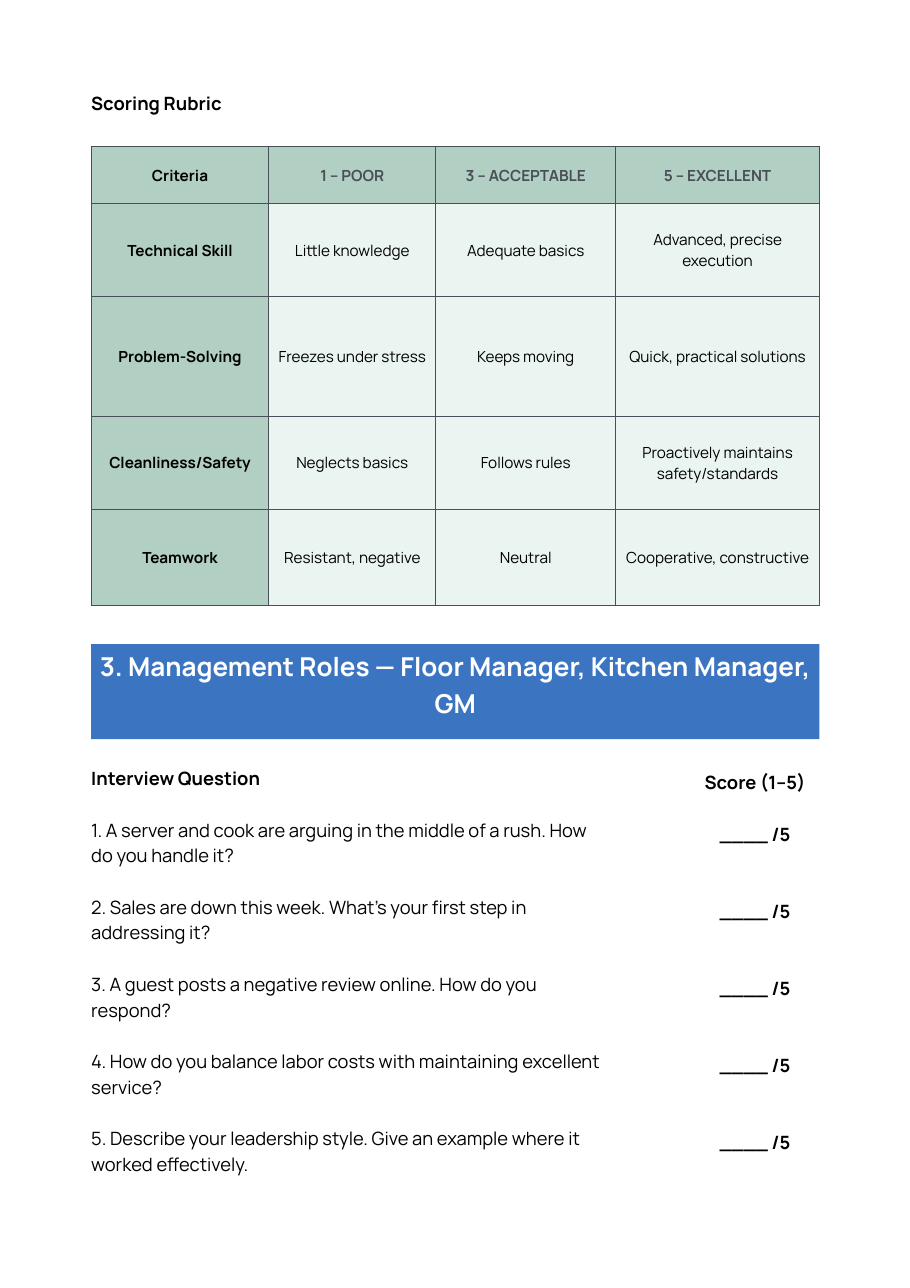
from lxml.etree import SubElement
from pptx import Presentation
from pptx.dml.color import RGBColor
from pptx.enum.shapes import MSO_SHAPE
from pptx.enum.text import MSO_ANCHOR, PP_ALIGN
from pptx.oxml.ns import qn
from pptx.util import Pt

BLACK = RGBColor(0x00, 0x00, 0x00)
WHITE = RGBColor(0xFF, 0xFF, 0xFF)
SLATE = RGBColor(0x49, 0x4F, 0x56)
SAGE = RGBColor(0xB2, 0xCF, 0xC4)
MINT = RGBColor(0xEA, 0xF4, 0xF0)
BLUE = RGBColor(0x3B, 0x75, 0xC2)

LEFT, WIDTH = 59.6, 476
LINE = 16.8


def write(frame, *lines, size=12, leading=LINE, color=BLACK, bold=True,
          align=PP_ALIGN.LEFT, anchor=MSO_ANCHOR.TOP, inset=0, gap=0):
    frame.word_wrap = True
    frame.vertical_anchor = anchor
    frame.margin_left = frame.margin_right = Pt(inset)
    frame.margin_top = frame.margin_bottom = Pt(inset)
    for index, line in enumerate(lines):
        paragraph = frame.paragraphs[0] if index == 0 else frame.add_paragraph()
        paragraph.alignment = align
        paragraph.line_spacing = Pt(leading)
        paragraph.space_before = Pt(gap if index else 0)
        run = paragraph.add_run()
        run.text = line
        run.font.name = "Manrope"
        run.font.size = Pt(size)
        run.font.bold = bold
        run.font.color.rgb = color


def draw_borders(cell):
    properties = cell._tc.get_or_add_tcPr()
    for side in ("a:lnL", "a:lnR", "a:lnT", "a:lnB"):
        border = SubElement(properties, qn(side), w=str(Pt(1.03)))
        fill = SubElement(border, qn("a:solidFill"))
        SubElement(fill, qn("a:srgbClr"), val=str(SLATE))


prs = Presentation()
prs.slide_width, prs.slide_height = Pt(594.72), Pt(841.68)
slide = prs.slides.add_slide(prs.slide_layouts[6])
shapes = slide.shapes

# Scoring rubric
rubric_title = shapes.add_textbox(Pt(LEFT), Pt(57.6), Pt(WIDTH), Pt(LINE))
write(rubric_title.text_frame, "Scoring Rubric")

criteria = [
    ["Criteria", "1 – POOR", "3 – ACCEPTABLE", "5 – EXCELLENT"],
    ["Technical Skill", "Little knowledge", "Adequate basics", "Advanced, precise execution"],
    ["Problem-Solving", "Freezes under stress", "Keeps moving", "Quick, practical solutions"],
    ["Cleanliness/Safety", "Neglects basics", "Follows rules", "Proactively maintains safety/standards"],
    ["Teamwork", "Resistant, negative", "Neutral", "Cooperative, constructive"],
]
column_widths = [116, 109.2, 117.5, 133.3]
row_heights = [37.2, 60.7, 78.3, 61, 62.8]

rubric = shapes.add_table(len(row_heights), len(column_widths), Pt(LEFT), Pt(95.8),
                          Pt(WIDTH), Pt(sum(row_heights))).table
rubric.first_row = rubric.horz_banding = False
for column, width in zip(rubric.columns, column_widths):
    column.width = Pt(width)
for r, (height, row) in enumerate(zip(row_heights, criteria)):
    rubric.rows[r].height = Pt(height)
    for c, wording in enumerate(row):
        cell = rubric.cell(r, c)
        heading = r == 0 or c == 0
        draw_borders(cell)
        cell.fill.solid()
        cell.fill.fore_color.rgb = SAGE if heading else MINT
        write(cell.text_frame, wording, size=10, leading=14, bold=heading,
              color=SLATE if r == 0 and c > 0 else BLACK, align=PP_ALIGN.CENTER)
        cell.vertical_anchor = MSO_ANCHOR.MIDDLE
        cell.margin_left = cell.margin_right = Pt(6.5)
        cell.margin_top = cell.margin_bottom = Pt(6.5)

# Section banner
banner = shapes.add_shape(MSO_SHAPE.RECTANGLE, Pt(LEFT), Pt(421), Pt(WIDTH), Pt(62))
banner.shadow.inherit = False
banner.fill.solid()
banner.fill.fore_color.rgb = BLUE
banner.line.fill.background()
section_title = shapes.add_textbox(Pt(LEFT), Pt(408.2), Pt(WIDTH), Pt(74.9))
write(section_title.text_frame, "3. Management Roles — Floor Manager, Kitchen Manager, GM",
      size=17, leading=23.8, color=WHITE, align=PP_ALIGN.CENTER,
      anchor=MSO_ANCHOR.MIDDLE, inset=4)

# Interview questions
questions = [
    "1. A server and cook are arguing in the middle of a rush. How do you handle it?",
    "2. Sales are down this week. What’s your first step in addressing it?",
    "3. A guest posts a negative review online. How do you respond?",
    "4. How do you balance labor costs with maintaining excellent service?",
    "5. Describe your leadership style. Give an example where it worked effectively.",
]
interview = shapes.add_textbox(Pt(LEFT), Pt(499), Pt(334), Pt(280)).text_frame
write(interview, "Interview Question", *questions, bold=False, gap=LINE)
interview.paragraphs[0].runs[0].font.bold = True

# Score blanks, one beside each question
scores = shapes.add_textbox(Pt(451.4), Pt(501.8), Pt(84.2), Pt(263.5)).text_frame
write(scores, "Score (1–5)", *["____ /5"] * len(questions),
      align=PP_ALIGN.CENTER, gap=2 * LINE)
scores.paragraphs[1].space_before = Pt(LINE)

prs.save("out.pptx")
